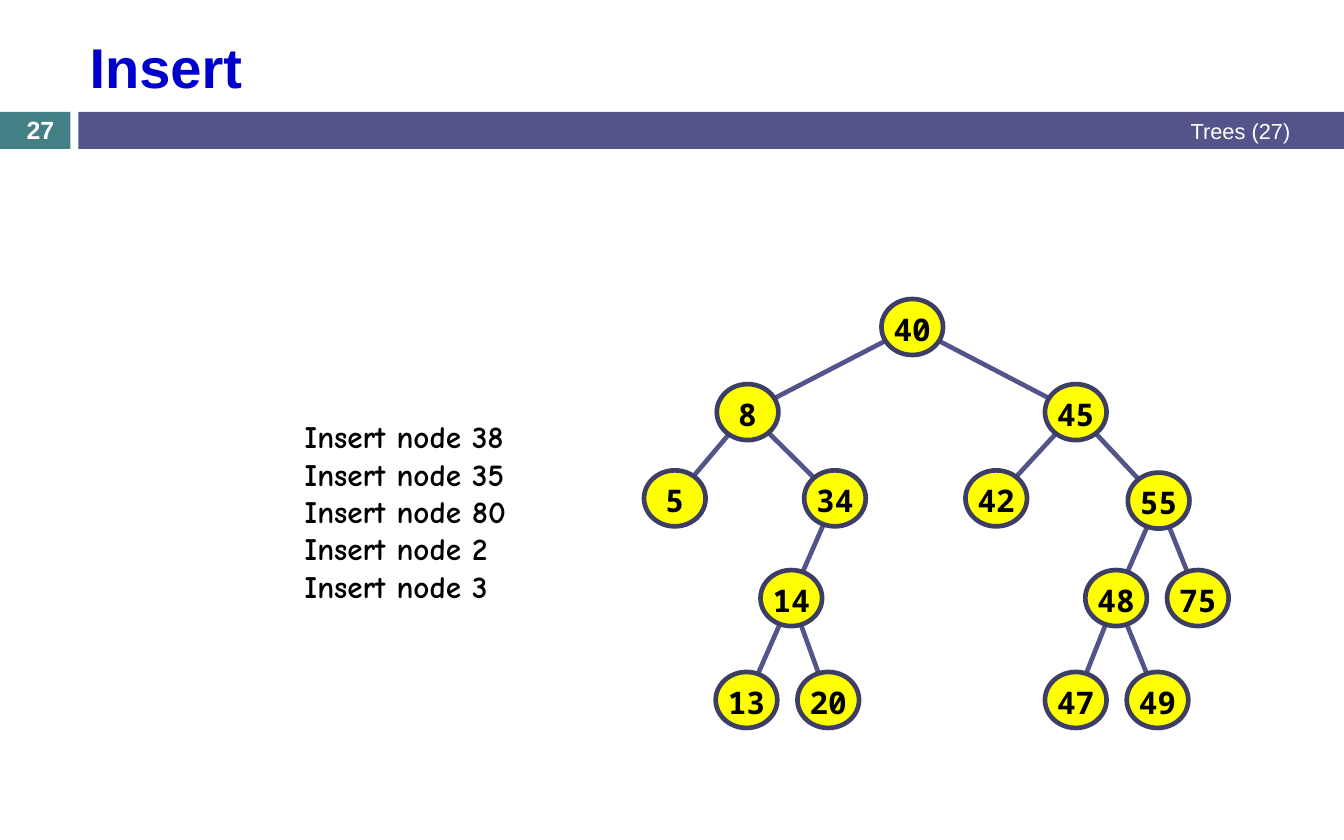
from typing import NamedTuple, Optional

from lxml.etree import SubElement
from pptx import Presentation
from pptx.dml.color import RGBColor
from pptx.enum.shapes import MSO_CONNECTOR as Conn, MSO_SHAPE as Shape
from pptx.enum.text import MSO_ANCHOR as Anchor, MSO_AUTO_SIZE as AutoSize, PP_ALIGN as Align
from pptx.oxml.ns import qn
from pptx.util import Inches, Pt

COLORS = {
    "title": "0000CC",
    "teal": "438086",
    "indigo": "53548A",
    "outline": "3D3E66",
    "node": "FFFF00",
    "black": "000000",
    "white": "FFFFFF",
}
NODE_W, NODE_H = 0.55, 0.5


class Node(NamedTuple):
    key: int
    left: float
    top: float
    parent: Optional[int] = None


class Bar(NamedTuple):
    left: float
    width: float
    color: str


class Label(NamedTuple):
    text: str
    left: float
    top: float
    width: float
    height: float
    size: int
    bold: bool
    align: Align


NODES = [
    Node(40, 7.87, 2.67),
    Node(8, 6.4, 3.43, 40),
    Node(45, 9.33, 3.43, 40),
    Node(5, 5.75, 4.2, 8),
    Node(34, 7.18, 4.2, 8),
    Node(42, 8.62, 4.2, 45),
    Node(55, 10.07, 4.22, 45),
    Node(14, 6.79, 5.09, 34),
    Node(48, 9.69, 5.09, 55),
    Node(75, 10.42, 5.09, 55),
    Node(13, 6.39, 6, 14),
    Node(20, 7.12, 6, 14),
    Node(47, 9.33, 6, 48),
    Node(49, 10.06, 6, 48),
]
BARS = [Bar(0, 0.63, "teal"), Bar(0.7, 11.3, "indigo")]
LABELS = [
    Label("Trees (27)", 6.17, 1, 5.45, 0.33, 14, False, Align.RIGHT),
    Label("27", 0, 1.01, 0.72, 0.3, 16, True, Align.CENTER),
]
INSERTED = [38, 35, 80, 2, 3]


def rgb(name: str) -> RGBColor:
    return RGBColor.from_string(COLORS[name])


def place(sp, left: float, top: float, width: float, height: float) -> None:
    sp.left, sp.top = Inches(left), Inches(top)
    sp.width, sp.height = Inches(width), Inches(height)


def style_text(tf, font: str, size: int, color: str, bold: bool, align: Align) -> None:
    for p in tf.paragraphs:
        p.alignment = align
        for r in p.runs:
            r.font.name = font
            r.font.size = Pt(size)
            r.font.bold = bold
            r.font.color.rgb = rgb(color)


def draw_bar(slide, bar: Bar) -> None:
    sp = slide.shapes.add_shape(
        Shape.RECTANGLE, Inches(bar.left), Inches(1), Inches(bar.width), Inches(0.33))
    sp.shadow.inherit = False
    sp.fill.solid()
    sp.fill.fore_color.rgb = rgb(bar.color)
    sp.line.fill.background()


def draw_label(slide, label: Label) -> None:
    sp = slide.shapes.add_textbox(
        Inches(label.left), Inches(label.top), Inches(label.width), Inches(label.height))
    tf = sp.text_frame
    tf.word_wrap = True
    tf.vertical_anchor = Anchor.MIDDLE
    tf.text = label.text
    style_text(tf, "Arial", label.size, "white", label.bold, label.align)


def draw_edge(slide, parent: Node, child: Node) -> None:
    dx, dy = NODE_W / 2, NODE_H / 2
    line = slide.shapes.add_connector(
        Conn.STRAIGHT,
        Inches(parent.left + dx), Inches(parent.top + dy),
        Inches(child.left + dx), Inches(child.top + dy))
    line.line.color.rgb = rgb("indigo")
    line.line.width = Pt(3)
    SubElement(line._element.spPr, qn("a:effectLst"))


def draw_node(slide, node: Node) -> None:
    sp = slide.shapes.add_shape(
        Shape.OVAL, Inches(node.left), Inches(node.top), Inches(NODE_W), Inches(NODE_H))
    sp.shadow.inherit = False
    sp.fill.solid()
    sp.fill.fore_color.rgb = rgb("node")
    sp.line.color.rgb = rgb("outline")
    sp.line.width = Pt(3)
    tf = sp.text_frame
    tf.word_wrap = False
    tf.vertical_anchor = Anchor.MIDDLE
    tf.margin_left = tf.margin_right = tf.margin_bottom = 0
    tf.margin_top = Inches(0.03)
    tf.text = str(node.key)
    style_text(tf, "Noto Sans Mono", 20, "black", True, Align.CENTER)


def write_title(slide) -> None:
    title = slide.shapes.title
    place(title, 0.7, 0.19, 10.91, 0.8)
    tf = title.text_frame
    tf.vertical_anchor = Anchor.MIDDLE
    tf.text = "Insert"
    style_text(tf, "Arial", 36, "title", True, Align.LEFT)


def write_list(slide) -> None:
    body = slide.placeholders[1]
    place(body, 2.62, 3.68, 2.69, 1.78)
    tf = body.text_frame
    tf.auto_size = AutoSize.SHAPE_TO_FIT_TEXT
    tf.text = "\n".join(f"Insert node {key}" for key in INSERTED)
    style_text(tf, "Comic Neue", 20, "black", True, Align.LEFT)
    for p in tf.paragraphs:
        p.space_before = Pt(0)
        pPr = p._p.get_or_add_pPr()
        pPr.set("marL", "0")
        pPr.set("indent", "0")
        SubElement(pPr, qn("a:buNone"))


def main() -> None:
    prs = Presentation()
    prs.slide_width, prs.slide_height = Inches(12), Inches(7.5)
    slide = prs.slides.add_slide(prs.slide_layouts[1])
    write_title(slide)
    write_list(slide)
    for bar in BARS:
        draw_bar(slide, bar)
    for label in LABELS:
        draw_label(slide, label)
    by_key = {node.key: node for node in NODES}
    for node in NODES:
        if node.parent is not None:
            draw_edge(slide, by_key[node.parent], node)
    for node in NODES:
        draw_node(slide, node)
    prs.save("out.pptx")


if __name__ == "__main__":
    main()
